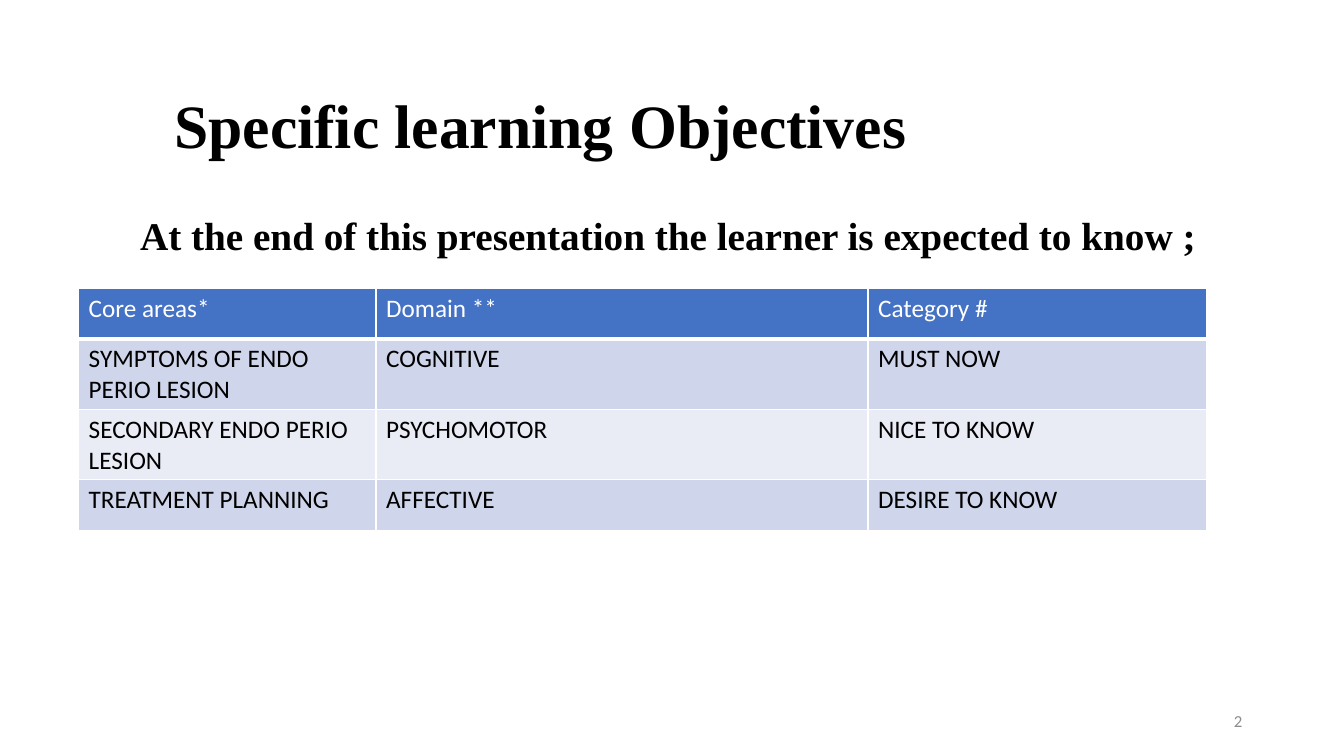
from lxml import etree
from pptx import Presentation
from pptx.dml.color import RGBColor
from pptx.enum.text import MSO_ANCHOR, PP_ALIGN
from pptx.oxml.ns import qn
from pptx.util import Inches, Pt

TOP, MIDDLE = MSO_ANCHOR.TOP, MSO_ANCHOR.MIDDLE
LEFT, RIGHT = PP_ALIGN.LEFT, PP_ALIGN.RIGHT
SERIF, SANS = "Times New Roman", "Calibri"
COLORS = {
    "black": "000000",
    "white": "FFFFFF",
    "gray": "8C8C8C",
    "head": "4472C4",
    "odd": "CFD5EA",
    "even": "E9EBF5",
}
ROWS = [
    ["Core areas*", "Domain **", "Category #"],
    ["SYMPTOMS OF ENDO PERIO LESION", "COGNITIVE", "MUST NOW"],
    ["SECONDARY ENDO PERIO LESION", "PSYCHOMOTOR", "NICE TO KNOW"],
    ["TREATMENT PLANNING", "AFFECTIVE", "DESIRE TO KNOW"],
]
WIDTHS = [2.95, 4.88, 3.36]
HEIGHT = 0.5


class Deck:
    def __init__(self, slide):
        self.slide = slide

    def color(self, name):
        return RGBColor.from_string(COLORS[name])

    def add_words(self, para, words, size, font, color, bold=False):
        run = para.add_run()
        run.text = words
        run.font.size = Pt(size)
        run.font.name = font
        run.font.bold = bold
        run.font.color.rgb = self.color(color)

    def text(self, box, words, size, font, color, bold=False,
             anchor=TOP, align=LEFT, spacing=1.0):
        shape = self.slide.shapes.add_textbox(*map(Inches, box))
        frame = shape.text_frame
        frame.word_wrap = True
        frame.vertical_anchor = anchor
        para = frame.paragraphs[0]
        para.alignment = align
        para.line_spacing = spacing
        self.add_words(para, words, size, font, color, bold)

    def border(self, cell, under):
        props = cell._tc.get_or_add_tcPr()
        sides = [("a:lnL", 1), ("a:lnR", 1), ("a:lnT", 1), ("a:lnB", under)]
        for spot, (tag, width) in enumerate(sides):
            line = etree.Element(qn(tag), w=str(Pt(width)))
            fill = etree.SubElement(line, qn("a:solidFill"))
            etree.SubElement(fill, qn("a:srgbClr"), val=COLORS["white"])
            props.insert(spot, line)

    def table(self, left, top, rows, widths, height):
        box = (left, top, sum(widths), height * len(rows))
        frame = self.slide.shapes.add_table(
            len(rows), len(widths), *map(Inches, box))
        grid = frame.table
        for col, width in zip(grid.columns, widths):
            col.width = Inches(width)
        for r, row in enumerate(rows):
            grid.rows[r].height = Inches(height)
            fill = "head" if r == 0 else "odd" if r % 2 else "even"
            for c, words in enumerate(row):
                cell = grid.cell(r, c)
                cell.fill.solid()
                cell.fill.fore_color.rgb = self.color(fill)
                self.border(cell, 1 if r else 3)
                self.add_words(cell.text_frame.paragraphs[0], words, 18, SANS,
                               "black" if r else "white")


def main():
    prs = Presentation()
    prs.slide_width, prs.slide_height = Inches(13.33), Inches(7.5)
    deck = Deck(prs.slides.add_slide(prs.slide_layouts[6]))
    deck.text((1.63, 0.67, 10.13, 1.21), "Specific learning Objectives",
              44, SERIF, "black", True, anchor=MIDDLE, spacing=0.9)
    deck.table(0.78, 2.86, ROWS, WIDTHS, HEIGHT)
    deck.text((1.29, 2.05, 10.71, 0.57),
              "At the end of this presentation the learner is expected to know ;",
              28, SERIF, "black", True)
    deck.text((9.42, 6.95, 3, 0.4), "2", 12, SANS, "gray",
              anchor=MIDDLE, align=RIGHT)
    prs.save("out.pptx")


if __name__ == "__main__":
    main()
